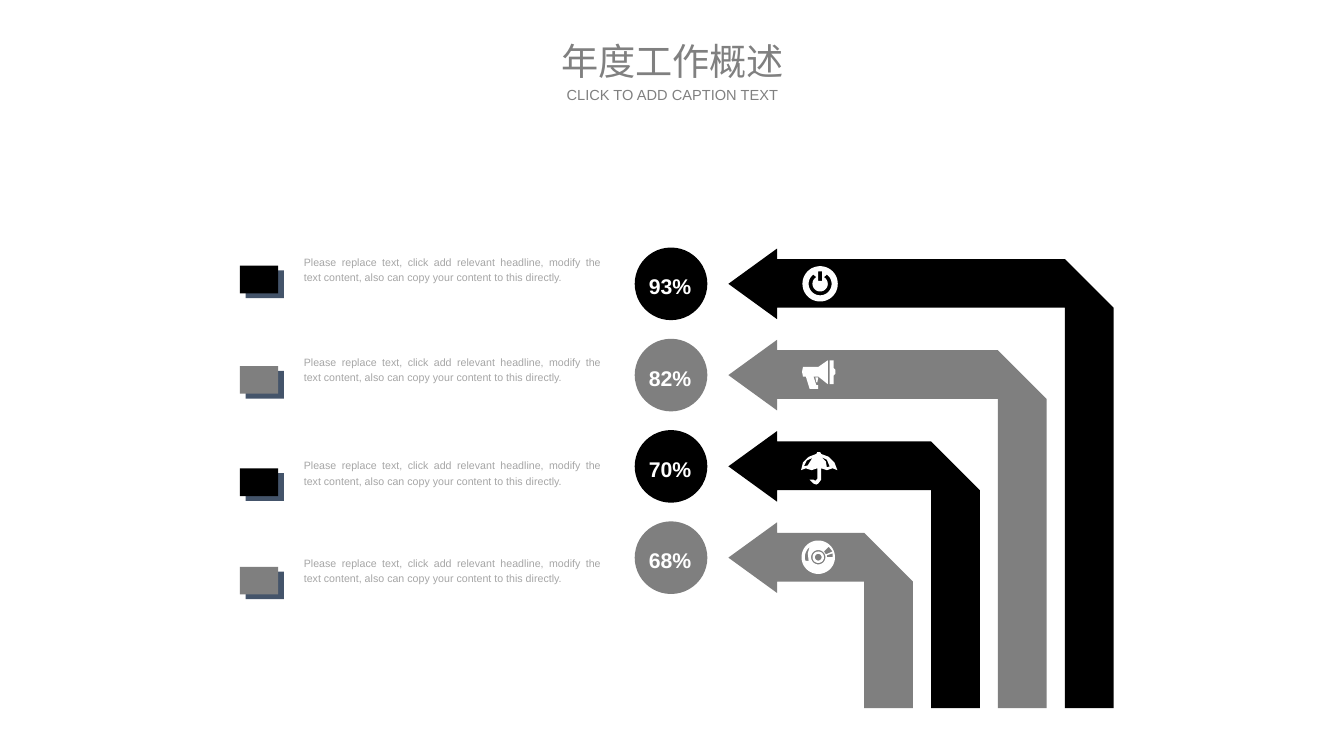
"""Build the annual work overview slide with four nested arrows."""
import math

import pptx
import pptx.util
import pptx.dml.color
import pptx.enum.shapes
import pptx.enum.text

Inches = pptx.util.Inches
SHAPES = pptx.enum.shapes.MSO_SHAPE
ALIGN = pptx.enum.text.PP_ALIGN
COLORS = {
    "black": "000000", "gray": "7F7F7F", "navy": "44546A",
    "white": "FFFFFF", "body": "A6A6A6", "heading": "808080",
}

presentation = pptx.Presentation()
presentation.slide_width = Inches(14.06)
presentation.slide_height = Inches(7.91)
slide = presentation.slides.add_slide(presentation.slide_layouts[5])


def arc(center_x, center_y, radius, start=0, end=360):
    """Return points along an arc, with angles in degrees clockwise from the right."""
    angles = [math.radians(start + (end - start) * step / 48) for step in range(49)]
    return [(center_x + radius * math.cos(angle), center_y + radius * math.sin(angle))
            for angle in angles]


def write(shape, text, size, color, align, bold=False, spacing=None):
    """Set one paragraph of text in a shape and format it."""
    text_frame = shape.text_frame
    text_frame.text = text
    text_frame.auto_size = pptx.enum.text.MSO_AUTO_SIZE.SHAPE_TO_FIT_TEXT
    paragraph = text_frame.paragraphs[0]
    paragraph.alignment = align
    if spacing:
        paragraph.line_spacing = spacing
    font = paragraph.runs[0].font
    font.name = "Arial"
    font.size = pptx.util.Pt(size)
    font.bold = bold
    font.color.rgb = pptx.dml.color.RGBColor.from_string(COLORS[color])


power_icon = [
    arc(8.58, 2.97, 0.185),
    [(8.56, 2.84), (8.6, 2.84), (8.6, 2.94), (8.56, 2.94)],
    arc(8.58, 2.97, 0.12, -54, 234) + arc(8.58, 2.97, 0.08, 240, -60),
]
megaphone_icon = [
    [(8.4, 3.84), (8.56, 3.84), (8.66, 3.77), (8.66, 4.02), (8.56, 3.94), (8.51, 3.94),
     (8.54, 4.03), (8.56, 4.03), (8.56, 4.07), (8.47, 4.07), (8.43, 3.94), (8.4, 3.94),
     (8.39, 3.89)],
    [(8.68, 3.77), (8.72, 3.77), (8.72, 3.85), (8.74, 3.87), (8.74, 3.91), (8.72, 3.93),
     (8.72, 4.02), (8.68, 4.02)],
    [(8.53, 3.95), (8.56, 3.95), (8.55, 4), (8.54, 4)],
]
umbrella_icon = [
    [(8.38, 4.92), (8.4, 4.84), (8.46, 4.78), (8.54, 4.75), (8.55, 4.73), (8.58, 4.73),
     (8.59, 4.75), (8.67, 4.78), (8.73, 4.84), (8.76, 4.92), (8.71, 4.9), (8.65, 4.92),
     (8.59, 4.9), (8.59, 5.02), (8.56, 5.06), (8.54, 5.07), (8.51, 5.06), (8.47, 5.02),
     (8.51, 5.02), (8.53, 5.03), (8.55, 5.01), (8.55, 4.9), (8.49, 4.92), (8.43, 4.9)],
    [(8.65, 4.89), (8.68, 4.88), (8.65, 4.81), (8.59, 4.78), (8.64, 4.83)],
    [(8.41, 4.88), (8.45, 4.87), (8.5, 4.79), (8.44, 4.82)],
]
disc_icon = [arc(8.56, 5.83, radius) for radius in (0.175, 0.075, 0.06, 0.035)] + [
    arc(8.56, 5.83, 0.14, 165, 230) + [(8.45, 5.79), (8.46, 5.87)],
    [(8.62, 5.77), (8.67, 5.72), (8.71, 5.77), (8.64, 5.8)],
    [(8.65, 5.81), (8.71, 5.79), (8.71, 5.83), (8.65, 5.83)],
]

body_text = ("Please replace text, click add relevant headline, modify the text content, "
             "also can copy your content to this directly.")
rows = [
    ("93%", "black", 2.6, power_icon),
    ("82%", "gray", 3.65, megaphone_icon),
    ("70%", "black", 4.73, umbrella_icon),
    ("68%", "gray", 5.75, disc_icon),
]
outlines = []
blocks = []
for index, (percent, color, text_top, icon) in enumerate(rows):
    top = 2.6 + 0.955 * index
    right = 11.65 - 0.7 * index
    inner = right - 0.51
    arrow = [(8.13, top), (8.13, top + 0.11), (inner, top + 0.11), (right, top + 0.62),
             (right, 7.41), (inner, 7.41), (inner, top + 0.62), (8.13, top + 0.62),
             (8.13, top + 0.74), (7.62, top + 0.37)]
    outlines += [([arrow], color), (icon, "white")]
    marker_top = text_top + (0.17 if index == 2 else 0.18)
    blocks += [
        (SHAPES.OVAL, 6.64, top - 0.01, 0.76, 0.76, color),
        (SHAPES.RECTANGLE, 2.57, marker_top + 0.05, 0.4, 0.29, "navy"),
        (SHAPES.RECTANGLE, 2.51, marker_top, 0.4, 0.29, color),
    ]

painted = []
for kind, left, top, width, height, color in blocks:
    shape = slide.shapes.add_shape(
        kind, Inches(left), Inches(top), Inches(width), Inches(height))
    painted.append((shape, color))
for contours, color in outlines:
    points = [[(Inches(x), Inches(y)) for x, y in contour] for contour in contours]
    builder = slide.shapes.build_freeform(*points[0][0], scale=1.0)
    builder.add_line_segments(points[0][1:], close=True)
    for contour in points[1:]:
        builder.move_to(*contour[0])
        builder.add_line_segments(contour[1:], close=True)
    painted.append((builder.convert_to_shape(), color))
for shape, color in painted:
    shape.shadow.inherit = False
    shape.fill.solid()
    shape.fill.fore_color.rgb = pptx.dml.color.RGBColor.from_string(COLORS[color])
    shape.line.fill.background()

for index, (percent, color, text_top, icon) in enumerate(rows):
    percent_box = slide.shapes.add_textbox(
        Inches(6.69), Inches(2.76 + 0.955 * index), Inches(0.65), Inches(0.39))
    percent_box.text_frame.word_wrap = False
    write(percent_box, percent, 16, "white", ALIGN.JUSTIFY, bold=True, spacing=1.2)
    body_box = slide.shapes.add_textbox(
        Inches(3.08), Inches(text_top), Inches(3.31), Inches(0.42))
    body_box.text_frame.word_wrap = True
    write(body_box, body_text, 8, "body", ALIGN.JUSTIFY, spacing=1.2)

title = slide.shapes.title
title.left, title.top, title.width, title.height = [
    Inches(length) for length in (5.77, 0.39, 2.53, 0.49)]
caption = slide.shapes.add_textbox(Inches(5.77), Inches(0.9), Inches(2.53), Inches(0.19))
for shape, text, size in ((title, "年度工作概述", 28),
                          (caption, "CLICK TO ADD CAPTION TEXT", 11)):
    text_frame = shape.text_frame
    text_frame.word_wrap = True
    text_frame.vertical_anchor = pptx.enum.text.MSO_ANCHOR.MIDDLE
    text_frame.margin_left = text_frame.margin_right = 0
    text_frame.margin_top = text_frame.margin_bottom = 0
    write(shape, text, size, "heading", ALIGN.CENTER)

presentation.save("out.pptx")
